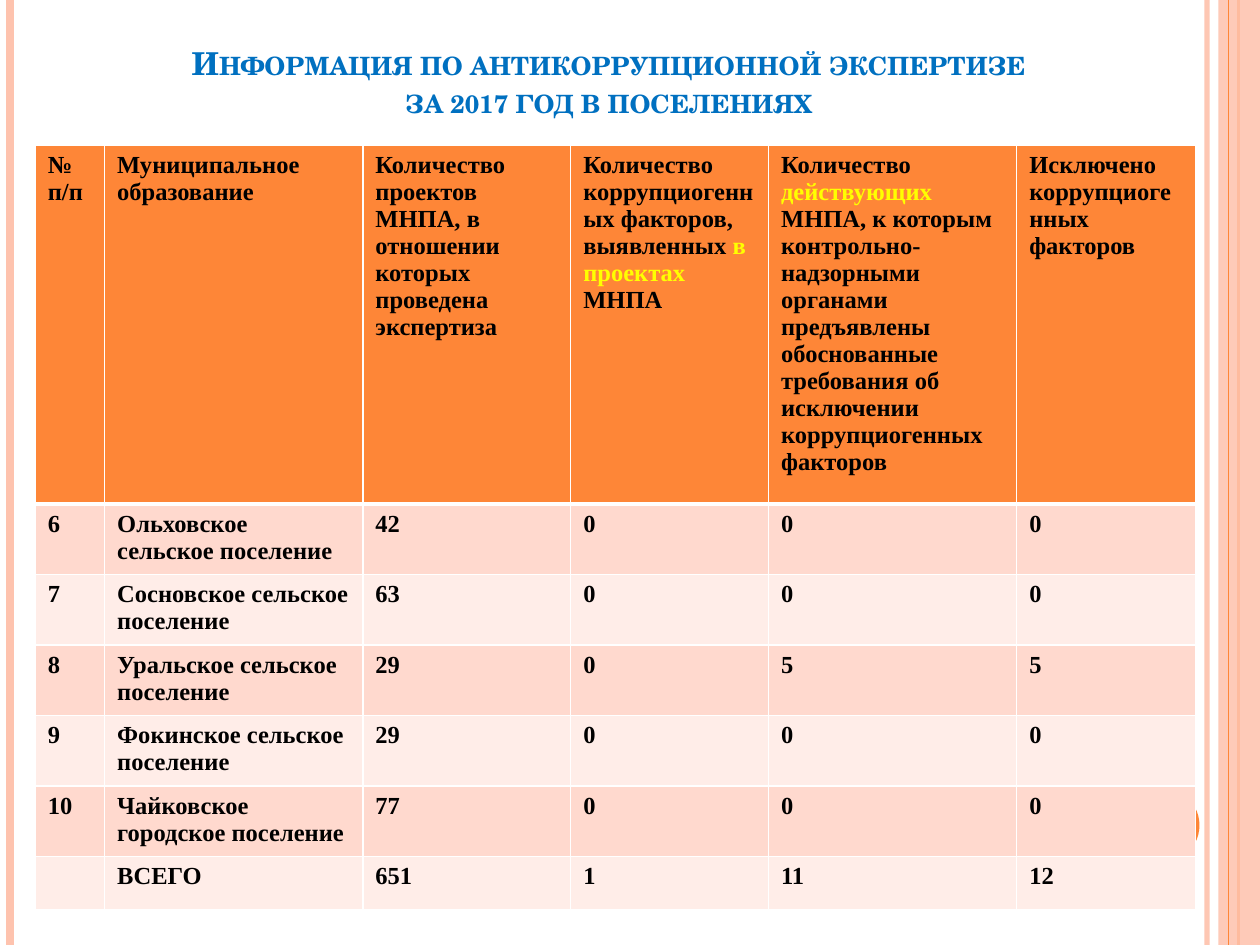
import copy
from dataclasses import dataclass

import pptx
import pptx.dml.color
import pptx.enum.shapes
import pptx.enum.text
import pptx.oxml
import pptx.oxml.ns
import pptx.util
from pptx.util import Inches

COLORS = {
    "orange": "FE8637",
    "peach": "FEC3AE",
    "title": "0070C0",
    "text": "000000",
    "accent": "FFFF00",
    "border": "FFFFFF",
    "band_dark": "FFD9CE",
    "band_light": "FFEDE8",
}


@dataclass
class Stripe:
    x: float
    width: float
    color: str
    opacity: int = 100


@dataclass
class Settlement:
    number: str
    name: str
    counts: tuple[int, int, int, int]


LEFT_STRIPES = [Stripe(9.58, 3, "peach", 93), Stripe(0.08, 4.5, "peach"), Stripe(9.83, 1.5, "orange")]
FRONT_STRIPE = Stripe(9.75, 0.75, "orange")

TITLE = "Информация по антикоррупционной экспертизе \nза 2017 год в поселениях "
HEADERS = [
    ["№ п/п"],
    ["Муниципальное образование"],
    ["Количество проектов МНПА, в отношении которых проведена экспертиза"],
    ["Количество коррупциогенных факторов, выявленных ", "в проектах ", "МНПА"],
    ["Количество ", "действующих ",
     "МНПА, к которым контрольно-надзорными органами предъявлены обоснованные "
     "требования об исключении коррупциогенных факторов"],
    ["Исключено коррупциогенных факторов"],
]
SETTLEMENTS = [
    Settlement("6", "Ольховское сельское поселение", (42, 0, 0, 0)),
    Settlement("7", "Сосновское сельское поселение", (63, 0, 0, 0)),
    Settlement("8", "Уральское сельское поселение", (29, 0, 5, 5)),
    Settlement("9", "Фокинское сельское поселение", (29, 0, 0, 0)),
    Settlement("10", "Чайковское городское поселение", (77, 0, 0, 0)),
    Settlement("", "ВСЕГО", (651, 1, 11, 12)),
]
COLUMN_WIDTHS = [0.55, 2.05, 1.65, 1.57, 1.97, 1.42]
ROW_HEIGHTS = [2.85] + [0.56] * 5 + [0.42]


def rgb(name: str) -> pptx.dml.color.RGBColor:
    return pptx.dml.color.RGBColor.from_string(COLORS[name])


def add_text(para, text: str, *, font: str = "Times New Roman", size: float = 14,
             color: str = "text", small_caps: bool = False) -> None:
    for index, line in enumerate(text.split("\n")):
        if index:
            para.add_line_break()
        span = para.add_run()
        span.text = line
        span.font.name = font
        span.font.size = pptx.util.Pt(size)
        span.font.bold = True
        span.font.color.rgb = rgb(color)
        properties = span.font._element
        if small_caps:
            properties.set("cap", "small")
        for line_break in para._p.findall(pptx.oxml.ns.qn("a:br")):
            if len(line_break) == 0:
                line_break.append(copy.deepcopy(properties))


def set_opacity(element, percent: int) -> None:
    if percent < 100:
        for color in element.iter(pptx.oxml.ns.qn("a:srgbClr")):
            alpha = color.makeelement(pptx.oxml.ns.qn("a:alpha"), {"val": str(percent * 1000)})
            color.append(alpha)


def add_stripe(page, stripe: Stripe) -> None:
    line = page.shapes.add_connector(
        pptx.enum.shapes.MSO_CONNECTOR.STRAIGHT,
        Inches(stripe.x), Inches(0), Inches(stripe.x), Inches(7.5))
    line.line.color.rgb = rgb(stripe.color)
    line.line.width = pptx.util.Pt(stripe.width)
    properties = line._element.spPr
    set_opacity(properties, stripe.opacity)
    properties.append(properties.makeelement(pptx.oxml.ns.qn("a:effectLst"), {}))


def add_block(page, kind, left: float, top: float, width: float, height: float,
              color: str, opacity: int = 100) -> None:
    shape = page.shapes.add_shape(kind, Inches(left), Inches(top), Inches(width), Inches(height))
    shape.shadow.inherit = False
    shape.fill.solid()
    shape.fill.fore_color.rgb = rgb(color)
    shape.line.fill.background()
    set_opacity(shape._element.spPr, opacity)


def style_cell(cell, fill: str, top: float, bottom: float) -> None:
    properties = cell._tc.get_or_add_tcPr()
    namespace = pptx.oxml.ns.nsdecls("a")
    for side, width in {"L": 1, "R": 1, "T": top, "B": bottom}.items():
        properties.append(pptx.oxml.parse_xml(
            f'<a:ln{side} {namespace} w="{int(pptx.util.Pt(width))}"><a:solidFill>'
            f'<a:srgbClr val="{COLORS["border"]}"/></a:solidFill></a:ln{side}>'))
    cell.fill.solid()
    cell.fill.fore_color.rgb = rgb(fill)


def add_settlement_table(page) -> None:
    rows = [HEADERS] + [
        [[item.number], [item.name]] + [[str(count)] for count in item.counts]
        for item in SETTLEMENTS
    ]
    table = page.shapes.add_table(
        len(rows), len(HEADERS), Inches(0.28), Inches(1.15),
        Inches(sum(COLUMN_WIDTHS)), Inches(sum(ROW_HEIGHTS))).table
    for column, width in zip(table.columns, COLUMN_WIDTHS):
        column.width = Inches(width)
    for row, height in zip(table.rows, ROW_HEIGHTS):
        row.height = Inches(height)
    for row_index, row in enumerate(rows):
        band = "band_dark" if row_index % 2 else "band_light"
        fill = band if row_index else "orange"
        for column_index, parts in enumerate(row):
            cell = table.cell(row_index, column_index)
            style_cell(cell, fill, top=3 if row_index == 1 else 1, bottom=1 if row_index else 3)
            for part_index, part in enumerate(parts):
                if part:
                    add_text(cell.text_frame.paragraphs[0], part,
                             color="accent" if part_index == 1 else "text")


def add_title(page) -> None:
    title = page.shapes.title
    title.left, title.top = Inches(0.5), Inches(0.21)
    title.width, title.height = Inches(8.72), Inches(0.79)
    frame = title.text_frame
    frame.auto_size = pptx.enum.text.MSO_AUTO_SIZE.NONE
    frame.vertical_anchor = pptx.enum.text.MSO_ANCHOR.BOTTOM
    para = frame.paragraphs[0]
    para.alignment = pptx.enum.text.PP_ALIGN.CENTER
    add_text(para, TITLE, font="TeX Gyre Schola", size=18, color="title", small_caps=True)


def main() -> None:
    deck = pptx.Presentation()
    deck.slide_width, deck.slide_height = Inches(10), Inches(7.5)
    page = deck.slides.add_slide(deck.slide_layouts[5])
    for stripe in LEFT_STRIPES:
        add_stripe(page, stripe)
    shapes = pptx.enum.shapes.MSO_SHAPE
    add_block(page, shapes.RECTANGLE, 9.67, 0, 0.33, 7.5, "peach", 87)
    add_stripe(page, FRONT_STRIPE)
    add_block(page, shapes.OVAL, 8.92, 6.25, 0.6, 0.6, "orange")
    add_title(page)
    add_settlement_table(page)
    deck.save("out.pptx")


if __name__ == "__main__":
    main()
